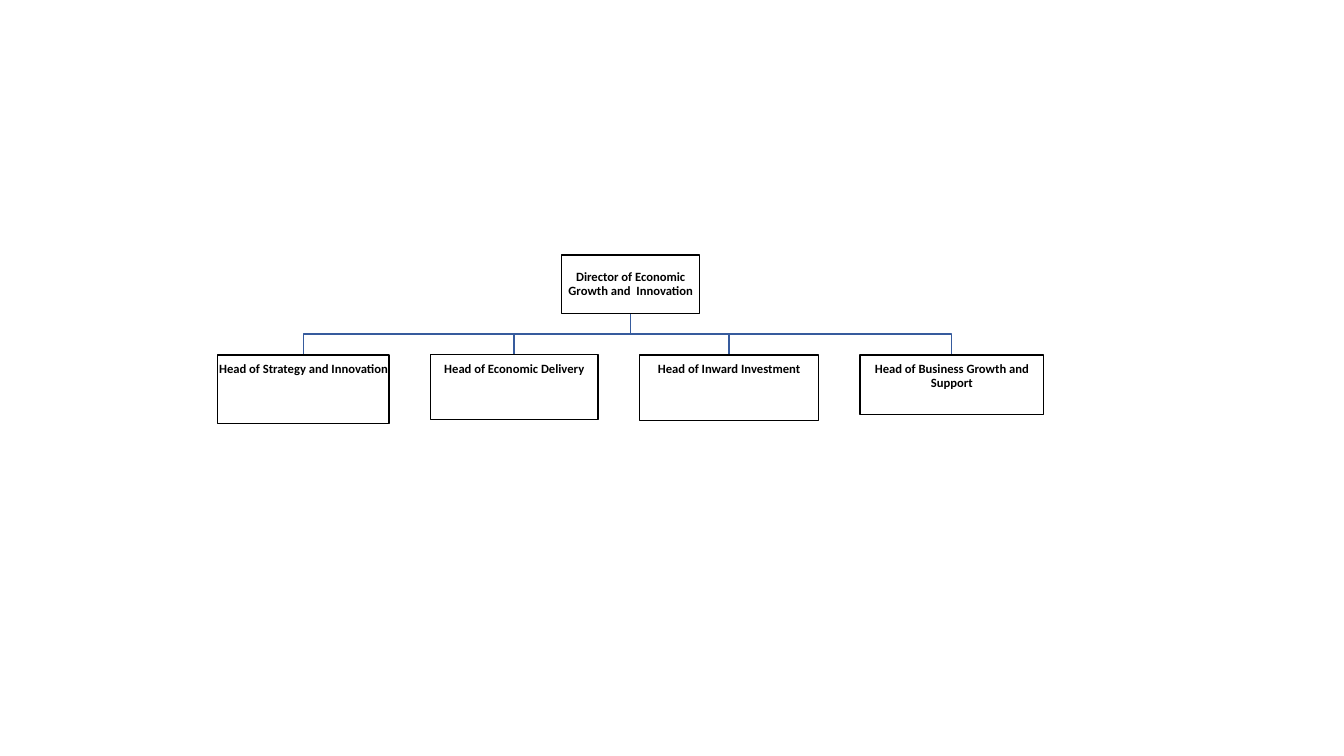
"""Build an organisation chart of a director and four heads of service."""
from pptx import Presentation
from pptx.dml.color import RGBColor
from pptx.enum.shapes import MSO_SHAPE
from pptx.enum.text import MSO_ANCHOR, PP_ALIGN
from pptx.util import Inches, Pt

DIRECTOR = ("Director of Economic Growth and  Innovation", 5.57, 2.53, 1.37, 0.58)
HEADS = [
    ("Head of Strategy and Innovation", 1.7, 0.68),
    ("Head of Economic Delivery", 1.66, 0.64),
    ("Head of Inward Investment", 1.78, 0.65),
    ("Head of Business Growth and Support", 1.82, 0.59),
]
HEADS_LEFT, HEADS_TOP, GAP = 2.16, 3.52, 0.41


def color(value):
    return RGBColor.from_string(value)


def write_text(frame, text, size=9, bold=True, font="Calibri", fill="000000",
               anchor=MSO_ANCHOR.MIDDLE, inset=0.01, top_inset=0.01):
    frame.word_wrap = True
    frame.vertical_anchor = anchor
    frame.margin_left = frame.margin_right = frame.margin_bottom = Inches(inset)
    frame.margin_top = Inches(top_inset)
    paragraph = frame.paragraphs[0]
    paragraph.alignment = PP_ALIGN.CENTER
    paragraph.line_spacing = 0.9
    run = paragraph.add_run()
    run.text = text
    run.font.name = font
    run.font.size = Pt(size)
    run.font.bold = bold
    run.font.color.rgb = color(fill)


class OrganisationChart:
    box_line = "000000"
    branch_line = "365B9D"
    line_width = 1

    def __init__(self, slide):
        self.slide = slide

    def outline(self, shape, line):
        shape.shadow.inherit = False
        shape.fill.background()
        shape.line.color.rgb = color(line)
        shape.line.width = Pt(self.line_width)

    def box(self, text, left, top, width, height, **text_format):
        shape = self.slide.shapes.add_shape(
            MSO_SHAPE.RECTANGLE, Inches(left), Inches(top), Inches(width), Inches(height))
        self.outline(shape, self.box_line)
        write_text(shape.text_frame, text, **text_format)

    def branch(self, start_x, start_y, end_x, end_y):
        middle_y = (start_y + end_y) / 2
        builder = self.slide.shapes.build_freeform(
            Inches(start_x), Inches(start_y), scale=1.0)
        corners = [(start_x, middle_y), (end_x, middle_y), (end_x, end_y)]
        builder.add_line_segments(
            [(Inches(x), Inches(y)) for x, y in corners], close=False)
        self.outline(builder.convert_to_shape(), self.branch_line)


def main():
    presentation = Presentation()
    presentation.slide_width = Inches(13.33)
    presentation.slide_height = Inches(7.5)
    slide = presentation.slides.add_slide(presentation.slide_layouts[6])
    chart = OrganisationChart(slide)

    _, director_left, director_top, director_width, director_height = DIRECTOR
    director_center = director_left + director_width / 2
    director_bottom = director_top + director_height

    left = HEADS_LEFT
    for title, width, height in HEADS:
        chart.branch(director_center, director_bottom, left + width / 2, HEADS_TOP)
        chart.box(title, left, HEADS_TOP, width, height,
                  anchor=MSO_ANCHOR.TOP, top_inset=0.08)
        left += width + GAP
    chart.box(*DIRECTOR)

    presentation.save("out.pptx")


if __name__ == "__main__":
    main()
